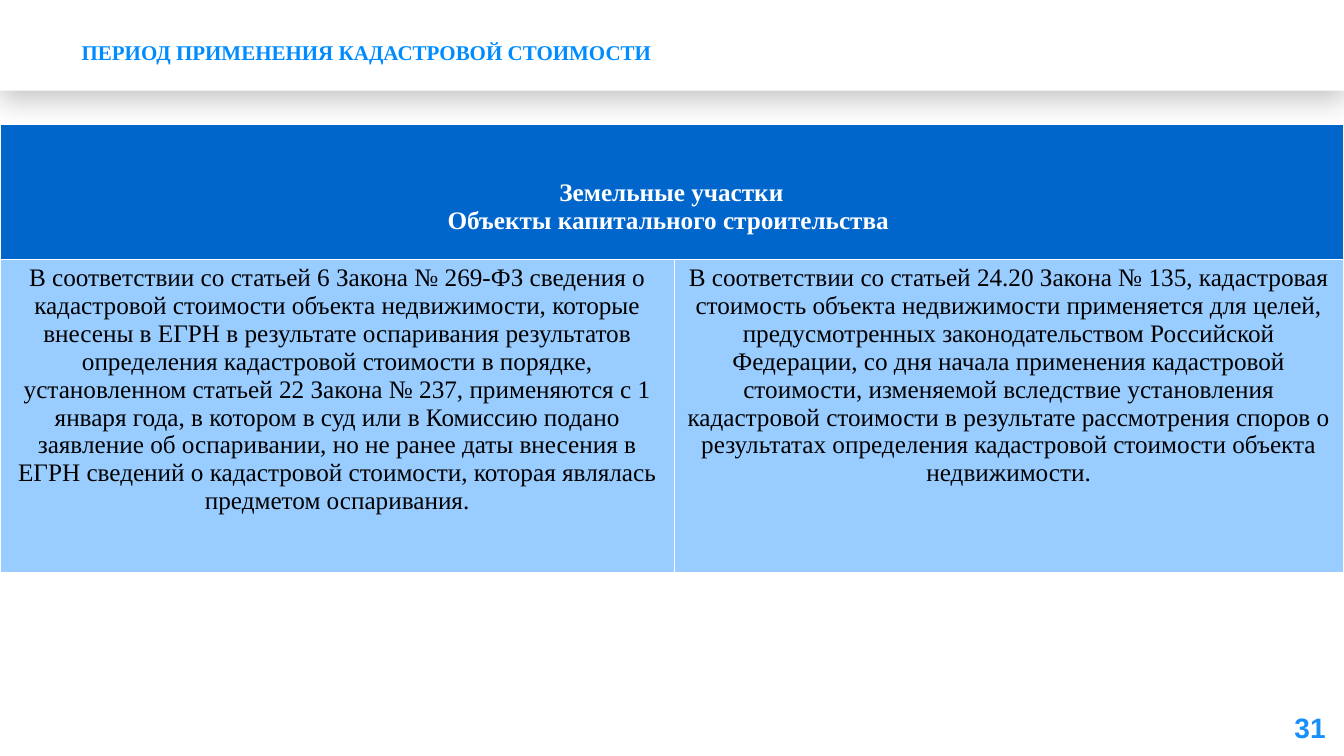
from lxml import etree
from pptx import Presentation
from pptx import util as u
from pptx.dml.color import RGBColor
from pptx.enum import shapes, text
from pptx.oxml import ns

WIDTH, HEIGHT = u.Inches(13.33), u.Inches(7.5)
SERIF = "Times New Roman"
HEADING = ["Земельные участки", "Объекты капитального строительства "]
LAND_RULE = (
    "В соответствии со статьей 6 Закона № 269-ФЗ сведения о кадастровой стоимости "
    "объекта недвижимости, которые внесены в ЕГРН в результате оспаривания результатов "
    "определения кадастровой стоимости в порядке, установленном статьей 22 Закона № 237, "
    "применяются с 1 января года, в котором в суд или в Комиссию подано заявление об "
    "оспаривании, но не ранее даты внесения в ЕГРН сведений о кадастровой стоимости, "
    "которая являлась предметом оспаривания."
)
BUILDING_RULE = (
    "В соответствии со статьей 24.20 Закона № 135, кадастровая стоимость объекта "
    "недвижимости применяется для целей, предусмотренных законодательством Российской "
    "Федерации, со дня начала применения кадастровой стоимости, изменяемой вследствие "
    "установления кадастровой стоимости в результате рассмотрения споров о результатах "
    "определения кадастровой стоимости объекта недвижимости."
)


def color(value):
    """Turn a hex string into a colour."""
    return RGBColor.from_string(value)


def write(frame, lines, size, tint, font=SERIF, bold=True, align=text.PP_ALIGN.LEFT):
    """Fill a text frame with equally formatted paragraphs."""
    frame.word_wrap = True
    frame.text = "\n".join(lines)
    for paragraph in frame.paragraphs:
        paragraph.alignment = align
        for run in paragraph.runs:
            run.font.name, run.font.size, run.font.bold = font, u.Pt(size), bold
            run.font.color.rgb = color(tint)


def add_node(parent, tag, **attributes):
    """Append a drawing element to a parent element."""
    return etree.SubElement(parent, ns.qn(tag), {k: str(v) for k, v in attributes.items()})


def add_header(slide, title):
    """Draw the white title band with its soft shadow."""
    band = slide.shapes.add_shape(
        shapes.MSO_SHAPE.RECTANGLE, 0, 0, WIDTH, int(HEIGHT * 0.12))
    band.fill.solid()
    band.fill.fore_color.rgb = color("FFFFFF")
    band.line.fill.background()
    band.shadow.inherit = False
    effects = band.element.spPr.find(ns.qn("a:effectLst"))
    shadow = add_node(effects, "a:outerShdw", blurRad=u.Pt(20), dist=u.Pt(6),
                      dir=90 * 60000, algn="t", rotWithShape=0)
    add_node(add_node(shadow, "a:srgbClr", val="000000"), "a:alpha", val=22000)
    write(band.text_frame, [title], 15, "008CFF")
    band.text_frame.margin_left = u.Inches(0.81)
    band.text_frame.vertical_anchor = text.MSO_ANCHOR.MIDDLE
    band.text_frame.paragraphs[0].line_spacing = 1.5


def style_cell(cell, fill):
    """Give a cell hairline white borders and a solid fill."""
    properties = cell._tc.get_or_add_tcPr()
    for side in ("a:lnL", "a:lnR", "a:lnT", "a:lnB"):
        border = add_node(properties, side, w=u.Pt(0.06))
        add_node(add_node(border, "a:solidFill"), "a:srgbClr", val="FFFFFF")
    cell.fill.solid()
    cell.fill.fore_color.rgb = color(fill)


def add_rules_table(slide, heading, rules):
    """Draw the table with a merged heading over two rules."""
    widths, heights = (6.69, 6.63), (1.34, 3.11)
    table = slide.shapes.add_table(
        2, 2, 0, u.Inches(1.23), u.Inches(sum(widths)), u.Inches(sum(heights))).table
    for column, width in zip(table.columns, widths):
        column.width = u.Inches(width)
    for row, height, fill in zip(table.rows, heights, ("0066CC", "99CCFF")):
        row.height = u.Inches(height)
        for cell in row.cells:
            style_cell(cell, fill)
    title = table.cell(0, 0)
    title.merge(table.cell(0, 1))
    title.margin_top = u.Inches(0.55)
    write(title.text_frame, heading, 18, "FFFFFF", align=text.PP_ALIGN.CENTER)
    for cell, rule in zip(table.rows[1].cells, rules):
        write(cell.text_frame, [rule], 18, "000000", bold=False, align=text.PP_ALIGN.CENTER)


def add_page_number(slide, number):
    """Place the page number in the bottom right corner."""
    left, top = u.Inches(12.74), u.Inches(7)
    box = slide.shapes.add_textbox(left, top, WIDTH - left, u.Inches(0.43))
    write(box.text_frame, [number], 20, "1890FB", font="Arial")


def main():
    """Build and save the slide."""
    deck = Presentation()
    deck.slide_width, deck.slide_height = WIDTH, HEIGHT
    slide = deck.slides.add_slide(deck.slide_layouts[6])
    add_header(slide, "ПЕРИОД ПРИМЕНЕНИЯ КАДАСТРОВОЙ СТОИМОСТИ")
    add_page_number(slide, "31")
    add_rules_table(slide, HEADING, [LAND_RULE, BUILDING_RULE])
    deck.save("out.pptx")


if __name__ == "__main__":
    main()
